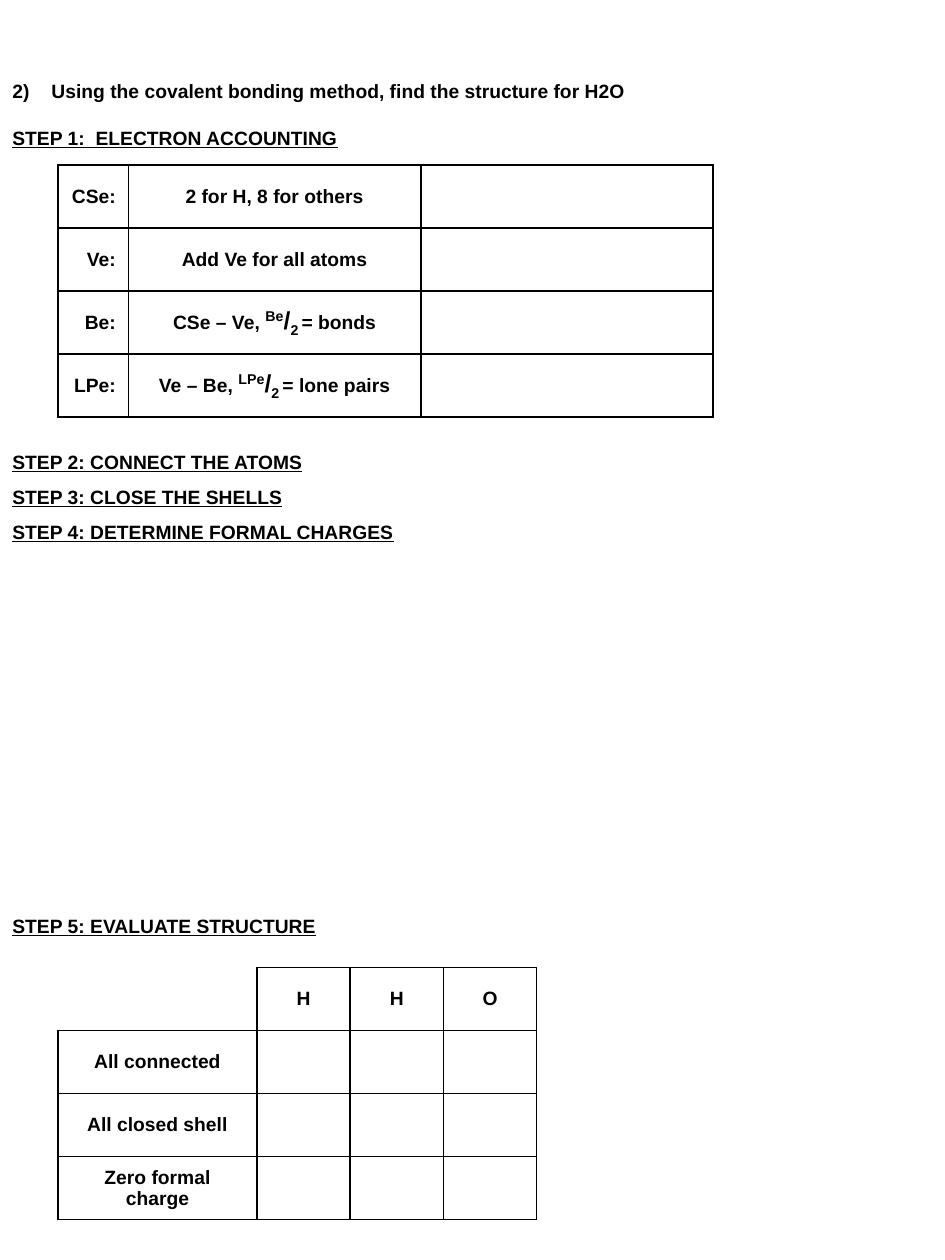
from lxml.etree import SubElement
from pptx import Presentation
from pptx.dml.color import RGBColor
from pptx.enum.text import MSO_ANCHOR, PP_ALIGN
from pptx.oxml.ns import qn
from pptx.util import Inches, Pt

COLORS = {"ink": "000000", "paper": "FFFFFF"}
FONT = "Arial"
ROW_HEIGHT = 0.5
TABLE_LEFT = 0.46
QUESTION = "2)\tUsing the covalent bonding method, find the structure for H2O"
STEPS = [
    ("STEP 1:  ELECTRON ACCOUNTING", 13.6),
    ("STEP 2: CONNECT THE ATOMS", 172),
    ("STEP 3: CLOSE THE SHELLS", 6.8),
    ("STEP 4: DETERMINE FORMAL CHARGES", 6.8),
    ("STEP 5: EVALUATE STRUCTURE", 212),
]
ACCOUNTING = [
    ["CSe:", "2 for H, 8 for others", ""],
    ["Ve:", "Add Ve for all atoms", ""],
    ["Be:", ("CSe – Ve, ", "Be", "= bonds"), ""],
    ["LPe:", ("Ve – Be, ", "LPe", "= lone pairs"), ""],
]
EVALUATION = [["", "H", "H", "O"]] + [
    [check, "", "", ""]
    for check in ("All connected", "All closed shell", "Zero formal charge")
]


def style_run(r, size=11, underline=None, baseline=0):
    """Give a run the bold worksheet font."""
    r.font.name, r.font.size, r.font.bold = FONT, Pt(size), True
    r.font.underline = underline
    r.font.color.rgb = RGBColor.from_string(COLORS["ink"])
    if baseline:
        r.font._element.set("baseline", str(baseline * 1000))


def add_steps(s):
    """Write the question and the step headings below it."""
    tf = s.shapes.add_textbox(Inches(0), Inches(0.58), Inches(7.5), Inches(9.42)).text_frame
    tf.word_wrap = True
    for i, (text, gap) in enumerate([(QUESTION, 0)] + STEPS):
        p = tf.add_paragraph() if i else tf.paragraphs[0]
        p.text = text
        p.space_before = Pt(gap)
        pPr = p._p.get_or_add_pPr()
        pPr.set("marL", str(Inches(0.31)))
        pPr.set("indent", str(-Inches(0.31)))
        for r in p.runs:
            style_run(r, underline=i > 0)


def add_fraction(p, lead, top, tail):
    """Write a formula with a raised numerator over a lowered 2."""
    parts = [(lead, 11, 0), (top, 14, 30), ("/", 14, 0), ("2", 14, -25),
             (" ", 11, -25), (tail, 11, 0)]
    for text, size, baseline in parts:
        r = p.add_run()
        r.text = text
        style_run(r, size, baseline=baseline)


def set_borders(cell, **sides):
    """Draw the four cell borders, black unless a side names a color."""
    tcPr = cell._tc.get_or_add_tcPr()
    for i, side in enumerate("LRTB"):
        ln = SubElement(tcPr, qn(f"a:ln{side}"), w=str(Pt(1)))
        fill = SubElement(ln, qn("a:solidFill"))
        SubElement(fill, qn("a:srgbClr"), val=COLORS[sides.get(side, "ink")])
        tcPr.insert(i, ln)


def fill_cell(cell, content, align):
    """Put centered-height text or a fraction formula in a cell."""
    cell.fill.background()
    cell.vertical_anchor = MSO_ANCHOR.MIDDLE
    p = cell.text_frame.paragraphs[0]
    p.alignment = align
    if isinstance(content, tuple):
        add_fraction(p, *content)
    elif content:
        p.text = content
        style_run(p.runs[0])


def add_grid(s, top, widths, rows, first_align=PP_ALIGN.CENTER):
    """Add a plain bordered table and return it."""
    frame = s.shapes.add_table(len(rows), len(widths), Inches(TABLE_LEFT), Inches(top),
                               Inches(sum(widths)), Inches(ROW_HEIGHT * len(rows)))
    table = frame.table
    table.first_row = table.horz_banding = False
    for column, width in zip(table.columns, widths):
        column.width = Inches(width)
    for i, row in enumerate(rows):
        table.rows[i].height = Inches(ROW_HEIGHT)
        for j, content in enumerate(row):
            cell = table.cell(i, j)
            fill_cell(cell, content, PP_ALIGN.CENTER if j else first_align)
            is_corner = i == j == 0 and not content
            set_borders(cell, **({"L": "paper", "T": "paper"} if is_corner else {}))
    return table


def main():
    """Build the worksheet slide."""
    prs = Presentation()
    prs.slide_width, prs.slide_height = Inches(7.5), Inches(10)
    s = prs.slides.add_slide(prs.slide_layouts[6])
    add_steps(s)
    add_grid(s, 1.31, [0.56, 2.32, 2.32], ACCOUNTING, PP_ALIGN.RIGHT)
    add_grid(s, 7.68, [1.58, 0.74, 0.74, 0.74], EVALUATION)
    prs.save("out.pptx")


if __name__ == "__main__":
    main()
